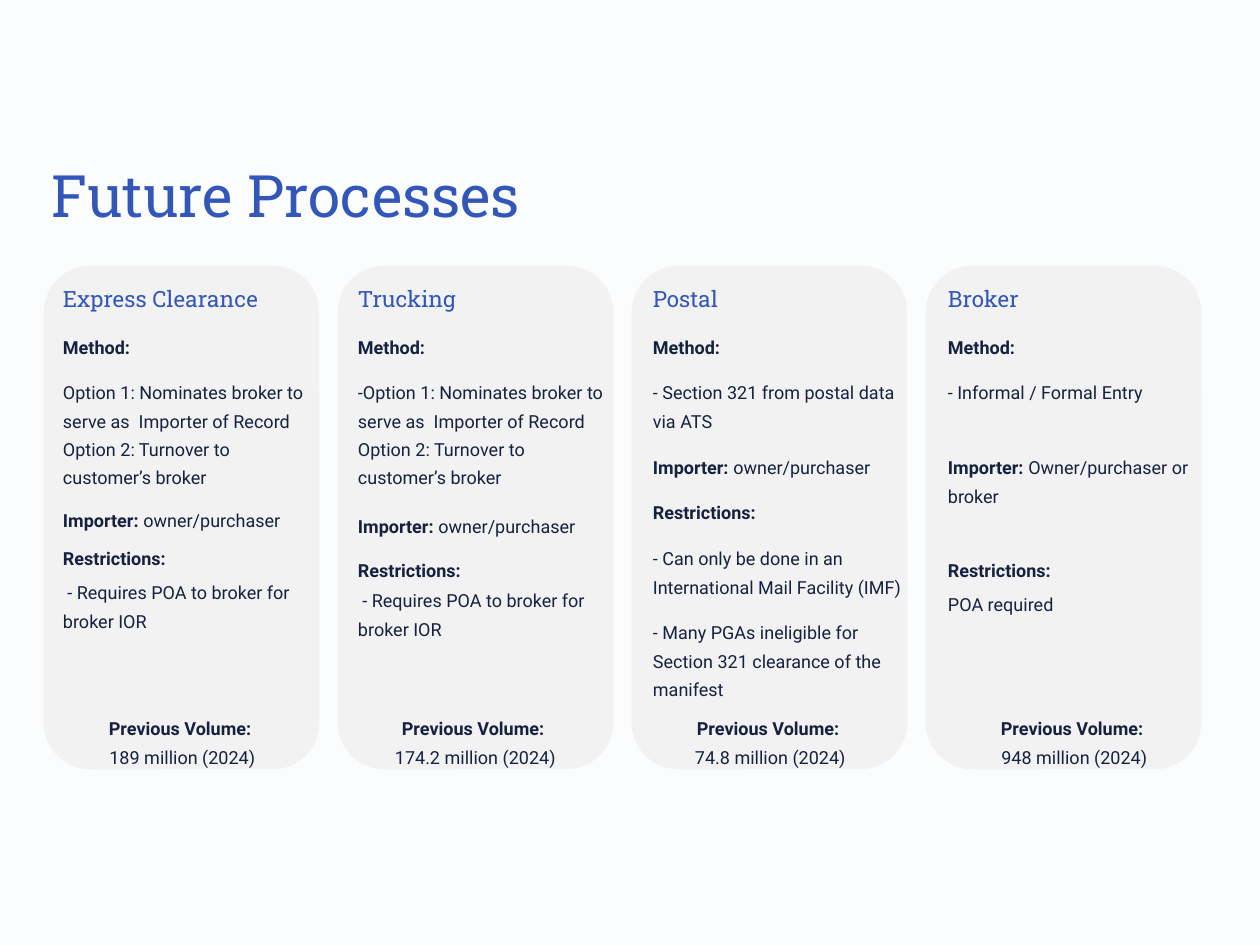
import pptx
import pptx.util
import pptx.dml.color
import pptx.enum.shapes
import pptx.enum.text

PX = 914400 // 126
COLORS = {"back": "FBFCFE", "card": "F2F2F2", "head": "3257B8", "body": "15213F"}
LINE = 29


def rgb(name):
    return pptx.dml.color.RGBColor.from_string(COLORS[name])


def add_text(x, y, w, h, paragraphs, size=10.3, spacing=16.2, font="Roboto", color="body", align="LEFT"):
    s = slide.shapes.add_textbox(x * PX, y * PX, w * PX, h * PX)
    tf = s.text_frame
    tf.word_wrap = True
    tf.margin_left = tf.margin_top = tf.margin_right = tf.margin_bottom = 0
    for i, (strong, plain) in enumerate(paragraphs):
        p = tf.paragraphs[0] if i == 0 else tf.add_paragraph()
        p.alignment = pptx.enum.text.PP_ALIGN[align]
        p.line_spacing = pptx.util.Pt(spacing)
        for text, bold in ((strong, True), (plain, False)):
            if text:
                r = p.add_run()
                r.text = text
                r.font.name = font
                r.font.size = pptx.util.Pt(size)
                r.font.bold = bold
                r.font.color.rgb = rgb(color)


prs = pptx.Presentation()
prs.slide_width = 1260 * PX
prs.slide_height = 945 * PX
slide = prs.slides.add_slide(prs.slide_layouts[6])
slide.background.fill.solid()
slide.background.fill.fore_color.rgb = rgb("back")

add_text(52, 156, 1150, 73, [("", "Future Processes")], 33.4, 41.6, "Roboto Slab", "head")

option_1 = "Option 1: Nominates broker to serve as  Importer of Record"
option_2 = "Option 2: Turnover to customer’s broker"
owner = ("Importer:", " owner/purchaser")
restrictions = ("Restrictions:", "")
poa = ("", " - Requires POA to broker for broker IOR")

columns = [
    ("Express Clearance", "189 million (2024)", 57, [
        (375, 4, [("", option_1), ("", option_2)]),
        (503, 1, [owner]),
        (541, 1, [restrictions]),
        (575, 2, [poa]),
    ]),
    ("Trucking", "174.2 million (2024)", 350, [
        (375, 4, [("", "-" + option_1), ("", option_2)]),
        (509, 1, [owner]),
        (553, 1, [restrictions]),
        (583, 2, [poa]),
    ]),
    ("Postal", "74.8 million (2024)", 645, [
        (375, 2, [("", "- Section 321 from postal data via ATS")]),
        (450, 1, [owner]),
        (495, 1, [restrictions]),
        (541, 2, [("", "- Can only be done in an International Mail Facility (IMF)")]),
        (615, 3, [("", "- Many PGAs ineligible for Section 321 clearance of the manifest")]),
    ]),
    ("Broker", "948 million (2024)", 949, [
        (375, 1, [("", "- Informal / Formal Entry")]),
        (450, 2, [("Importer:", " Owner/purchaser or broker")]),
        (553, 1, [restrictions]),
        (587, 1, [("", "POA required")]),
    ]),
]

for i, (heading, volume, volume_x, blocks) in enumerate(columns):
    s = slide.shapes.add_shape(pptx.enum.shapes.MSO_SHAPE.ROUNDED_RECTANGLE,
                               (45 + 294 * i) * PX, 267 * PX, 273 * PX, 501 * PX)
    s.shadow.inherit = False
    s.fill.solid()
    s.fill.fore_color.rgb = rgb("card")
    s.line.color.rgb = rgb("card")
    s.line.width = pptx.util.Pt(1.5)

    x = 63 + 295 * i
    add_text(x, 284, 227, 28, [("", heading)], 12.8, 15.9, "Roboto Slab", "head")
    add_text(x, 330, 251, LINE, [("Method:", "")])
    for y, lines, paragraphs in blocks:
        add_text(x, y, 251, lines * LINE, paragraphs)
    add_text(volume_x, 711, 251, 2 * LINE, [("Previous Volume: ", ""), ("", volume)], align="CENTER")

prs.save("out.pptx")
